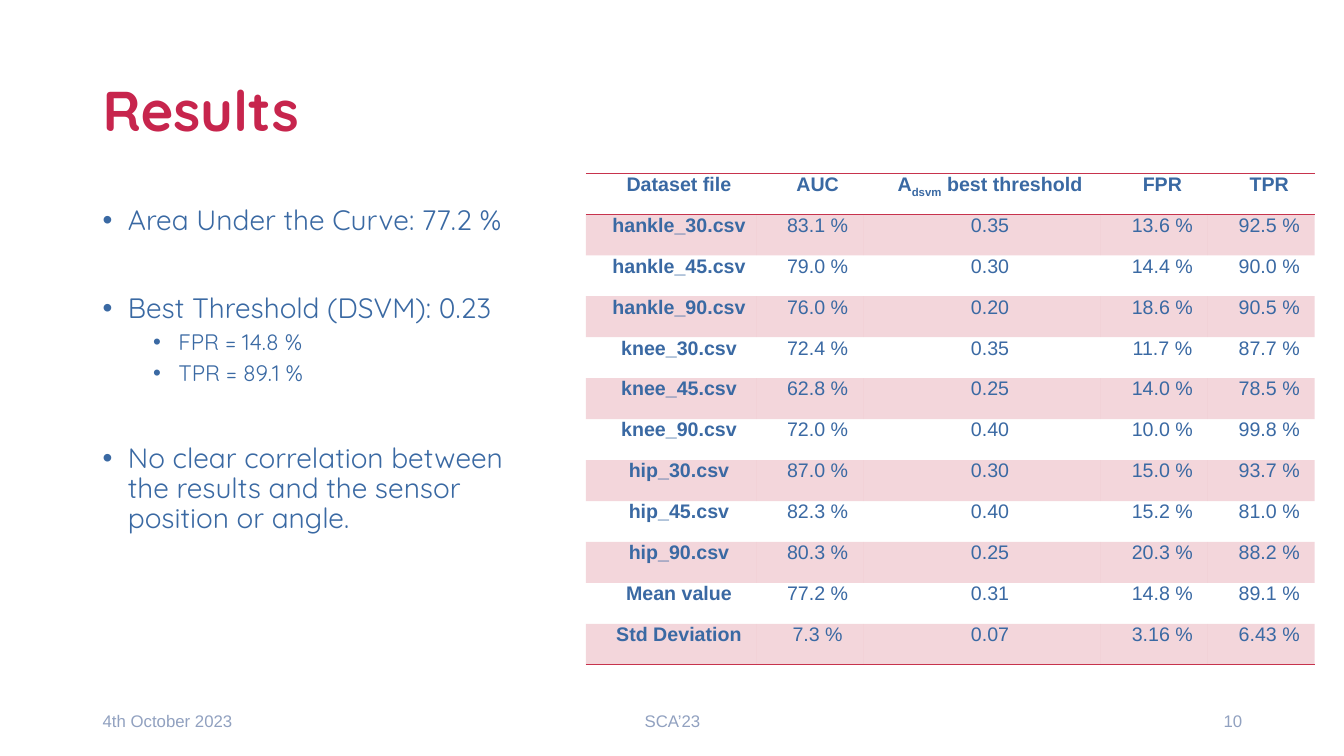
from dataclasses import dataclass

from lxml import etree
from pptx import Presentation
from pptx.dml.color import RGBColor
from pptx.enum.text import MSO_ANCHOR, PP_ALIGN
from pptx.oxml.ns import qn
from pptx.util import Inches, Pt

LEFT, CENTER, RIGHT = PP_ALIGN.LEFT, PP_ALIGN.CENTER, PP_ALIGN.RIGHT
TOP, MIDDLE = MSO_ANCHOR.TOP, MSO_ANCHOR.MIDDLE
PLAIN_TABLE_STYLE = "{2D5ABB26-0587-4C30-8999-92F81FD0307C}"


@dataclass(frozen=True)
class Theme:
    title_color: str = "C7254D"
    accent: str = "C7334D"
    body_color: str = "3A69A3"
    footer_color: str = "91A1C0"
    heading_font: str = "Quicksand"
    data_font: str = "Arial"
    title_size: int = 40
    body_size: int = 20
    detail_size: int = 16
    table_size: int = 14
    footer_size: int = 12
    band_alpha: int = 20


THEME = Theme()


@dataclass(frozen=True)
class Bullet:
    text: str
    size: int = THEME.body_size
    level: int = 0
    before: float = 0


@dataclass(frozen=True)
class Footer:
    text: str
    left: float
    width: float
    align: PP_ALIGN


BULLETS = [
    Bullet("Area Under the Curve: 77.2 %"),
    Bullet("Best Threshold (DSVM): 0.23", before=41),
    Bullet("FPR = 14.8 %", THEME.detail_size, 1, 5),
    Bullet("TPR = 89.1 %", THEME.detail_size, 1, 5),
    Bullet("No clear correlation between the results and the sensor position or angle.", before=41),
]

FOOTERS = [
    Footer("4th October 2023", 0.92, 3, LEFT),
    Footer("SCA’23", 4.42, 4.5, CENTER),
    Footer("10", 9.42, 3, RIGHT),
]

COLUMN_WIDTHS = [1.69, 1.06, 2.36, 1.06, 1.06]
RESULTS = [
    ("Dataset file", "AUC", ("A", "dsvm", " best threshold"), "FPR", "TPR"),
    ("hankle_30.csv", "83.1 %", "0.35", "13.6 %", "92.5 %"),
    ("hankle_45.csv", "79.0 %", "0.30", "14.4 %", "90.0 %"),
    ("hankle_90.csv", "76.0 %", "0.20", "18.6 %", "90.5 %"),
    ("knee_30.csv", "72.4 %", "0.35", "11.7 %", "87.7 %"),
    ("knee_45.csv", "62.8 %", "0.25", "14.0 %", "78.5 %"),
    ("knee_90.csv", "72.0 %", "0.40", "10.0 %", "99.8 %"),
    ("hip_30.csv", "87.0 %", "0.30", "15.0 %", "93.7 %"),
    ("hip_45.csv", "82.3 %", "0.40", "15.2 %", "81.0 %"),
    ("hip_90.csv", "80.3 %", "0.25", "20.3 %", "88.2 %"),
    ("Mean value", "77.2 %", "0.31", "14.8 %", "89.1 %"),
    ("Std Deviation", "7.3 %", "0.07", "3.16 %", "6.43 %"),
]


def add_span(para, text: str, *, size: float, font: str, color: str,
             bold: bool = False, subscript: bool = False) -> None:
    span = para.add_run()
    span.text = text
    span.font.size = Pt(size)
    span.font.name = font
    span.font.bold = bold
    span.font.color.rgb = RGBColor.from_string(color)
    if subscript:
        span.font._element.set("baseline", "-25000")


def set_indent(para, margin: float, first: float) -> None:
    properties = para._p.get_or_add_pPr()
    properties.set("marL", str(Inches(margin)))
    properties.set("indent", str(Inches(first)))


def add_frame(page, left: float, top: float, width: float, height: float, anchor: MSO_ANCHOR):
    box = page.shapes.add_textbox(Inches(left), Inches(top), Inches(width), Inches(height))
    frame = box.text_frame
    frame.word_wrap = True
    frame.vertical_anchor = anchor
    return frame


def add_bullets(page) -> None:
    frame = add_frame(page, 0.92, 2, 4.59, 4.06, TOP)
    for index, bullet in enumerate(BULLETS):
        para = frame.add_paragraph() if index else frame.paragraphs[0]
        para.level = bullet.level
        set_indent(para, 0.25 + 0.5 * bullet.level, -0.25)
        para.line_spacing = 0.9
        para.space_before = Pt(bullet.before)
        properties = para._p.get_or_add_pPr()
        etree.SubElement(properties, qn("a:buFont")).set("typeface", THEME.data_font)
        etree.SubElement(properties, qn("a:buChar")).set("char", "•")
        add_span(para, bullet.text, size=bullet.size,
                 font=THEME.heading_font, color=THEME.body_color)


def add_rule(cell, side: str, position: int) -> None:
    line = etree.Element(qn(f"a:{side}"), w=str(Pt(1)))
    fill = etree.SubElement(line, qn("a:solidFill"))
    etree.SubElement(fill, qn("a:srgbClr"), val=THEME.accent)
    cell._tc.get_or_add_tcPr().insert(position, line)


def fill_band(cell) -> None:
    cell.fill.solid()
    cell.fill.fore_color.rgb = RGBColor.from_string(THEME.accent)
    color = cell._tc.tcPr.find(f"{qn('a:solidFill')}/{qn('a:srgbClr')}")
    etree.SubElement(color, qn("a:alpha"), val=str(THEME.band_alpha * 1000))


def format_cell(cell, content: str | tuple[str, ...], row: int, column: int) -> None:
    cell.margin_left = cell.margin_right = Inches(0.07)
    cell.margin_top = cell.margin_bottom = 0
    para = cell.text_frame.paragraphs[0]
    para.alignment = CENTER
    set_indent(para, 0, 0.16)
    parts = (content,) if isinstance(content, str) else content
    for index, part in enumerate(parts):
        add_span(para, part, size=THEME.table_size, font=THEME.data_font,
                 color=THEME.body_color, bold=row == 0 or column == 0, subscript=index == 1)
    if row % 2:
        fill_band(cell)
    else:
        cell.fill.background()
    if row == 0:
        add_rule(cell, "lnT", 0)
        add_rule(cell, "lnB", 1)
    elif row == len(RESULTS) - 1:
        add_rule(cell, "lnB", 0)


def add_results(page) -> None:
    table = page.shapes.add_table(len(RESULTS), len(COLUMN_WIDTHS), Inches(5.81), Inches(1.72),
                                  Inches(sum(COLUMN_WIDTHS)), Inches(4.88)).table
    table.horz_banding = False
    table._tbl.tblPr.find(qn("a:tableStyleId")).text = PLAIN_TABLE_STYLE
    for column, width in zip(table.columns, COLUMN_WIDTHS):
        column.width = Inches(width)
    for row, values in enumerate(RESULTS):
        for column, content in enumerate(values):
            format_cell(table.cell(row, column), content, row, column)


def main() -> None:
    deck = Presentation()
    deck.slide_width, deck.slide_height = Inches(13.33), Inches(7.5)
    page = deck.slides.add_slide(deck.slide_layouts[6])

    # Title
    title = add_frame(page, 0.92, 0.4, 11.5, 1.45, MIDDLE).paragraphs[0]
    title.line_spacing = 0.9
    add_span(title, "Results", size=THEME.title_size, font=THEME.heading_font,
             color=THEME.title_color, bold=True)

    # Results table and findings
    add_results(page)
    add_bullets(page)

    # Footer line
    for footer in FOOTERS:
        para = add_frame(page, footer.left, 6.95, footer.width, 0.4, MIDDLE).paragraphs[0]
        para.alignment = footer.align
        add_span(para, footer.text, size=THEME.footer_size,
                 font=THEME.data_font, color=THEME.footer_color)

    deck.save("out.pptx")


if __name__ == "__main__":
    main()
